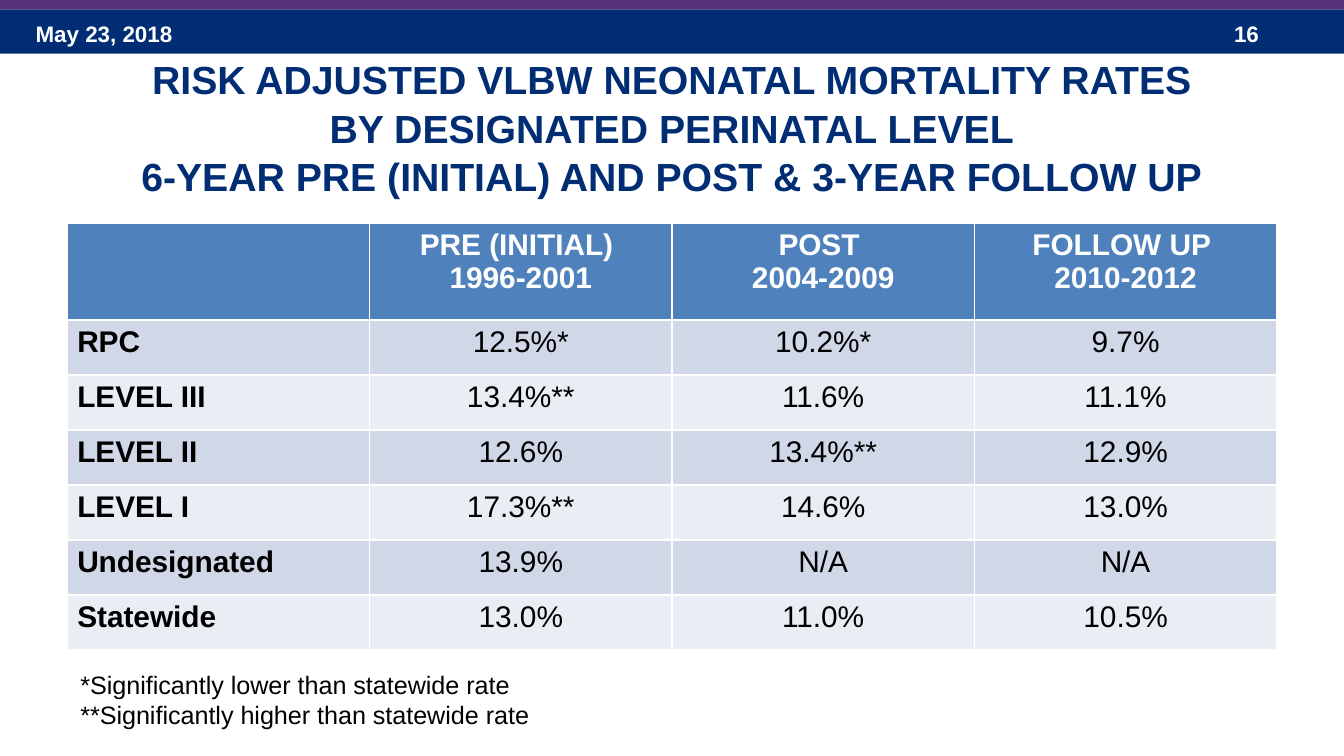
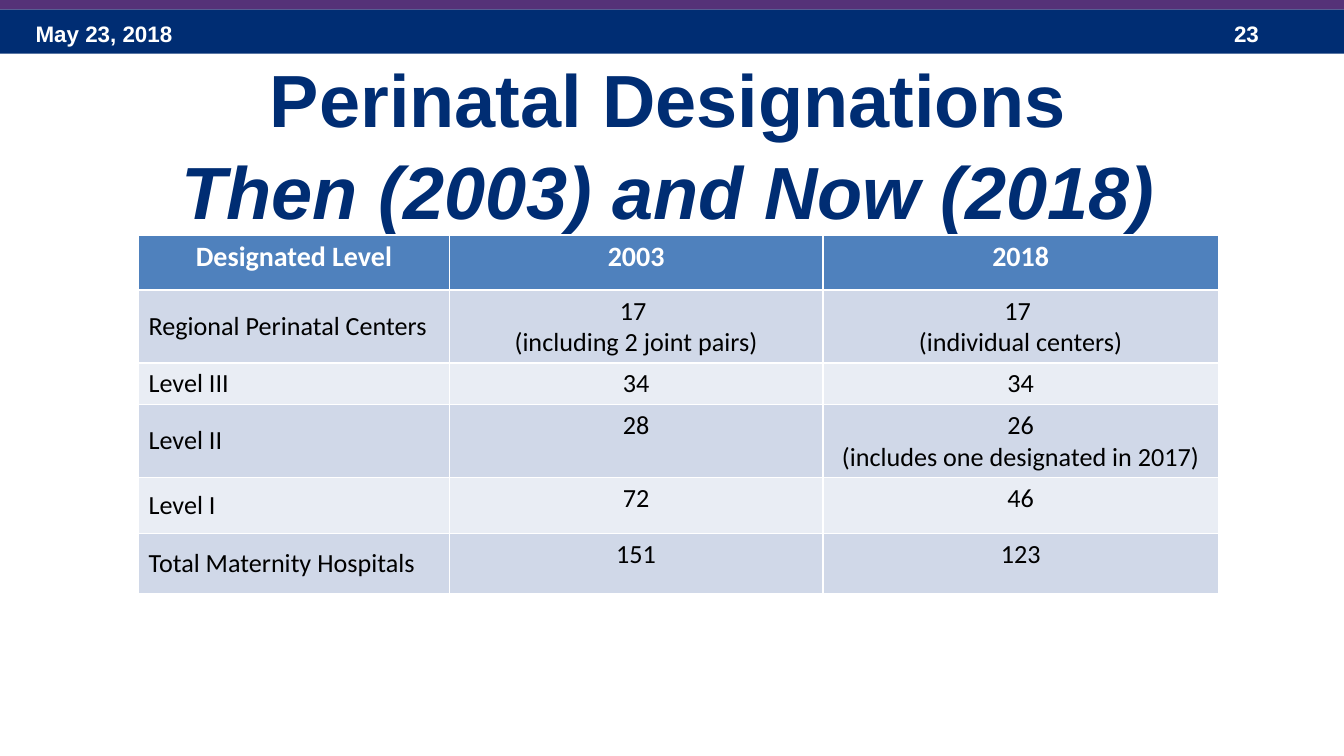
from dataclasses import dataclass

from pptx import Presentation
from pptx.dml.color import RGBColor
from pptx.enum.shapes import MSO_SHAPE
from pptx.enum.text import MSO_ANCHOR, PP_ALIGN
from pptx.util import Pt


@dataclass(frozen=True)
class Theme:
    navy: str = "002D73"
    purple: str = "553278"
    white: str = "FFFFFF"
    black: str = "000000"
    header_fill: str = "4F81BD"
    row_fills: tuple = ("D0D8E8", "E9EDF4")
    font: str = "Arial"
    table_font: str = "Calibri"
    banner_size: float = 12
    rates_title_size: float = 21
    designations_title_size: float = 39.6
    rates_size: float = 16
    header_size: float = 15
    designations_size: float = 14
    note_size: float = 13.5
    title_spacing: float = 1.04


THEME = Theme()
PAGE_WIDTH, PAGE_HEIGHT = 720, 405


def text_format(size, color, bold=False, name=THEME.font):
    return {"size": Pt(size), "name": name, "bold": bold, "color": color}


def apply_format(font, values):
    for key, value in values.items():
        if key == "color":
            font.color.rgb = RGBColor.from_string(value)
        else:
            setattr(font, key, value)


def write_span(para, text, values):
    span = para.add_run()
    span.text = text
    apply_format(span.font, values)


def write_lines(frame, lines, values, align=PP_ALIGN.LEFT):
    for index, line in enumerate(lines):
        para = frame.paragraphs[0] if index == 0 else frame.add_paragraph()
        para.alignment = align
        write_span(para, line, values)


def add_text_box(page, place):
    box = page.shapes.add_textbox(*map(Pt, place))
    box.text_frame.word_wrap = True
    return box.text_frame


def add_band(page, top, height, color):
    band = page.shapes.add_shape(
        MSO_SHAPE.RECTANGLE, 0, Pt(top), Pt(PAGE_WIDTH), Pt(height))
    band.shadow.inherit = False
    band.fill.solid()
    band.fill.fore_color.rgb = RGBColor.from_string(color)
    band.line.fill.background()


def add_page(deck, number):
    page = deck.slides.add_slide(deck.slide_layouts[6])
    add_band(page, 5, 23.75, THEME.navy)
    values = text_format(THEME.banner_size, THEME.white, True)
    for text, left, width in (("May 23, 2018", 12, 168), (str(number), 654, 54)):
        write_lines(add_text_box(page, (left, 7.2, width, 21.6)), [text], values)
    add_band(page, -1.5, 6.5, THEME.purple)
    return page


def add_title(page, place, lines, size, italic_lines=()):
    frame = add_text_box(page, place)
    frame.vertical_anchor = MSO_ANCHOR.MIDDLE
    para = frame.paragraphs[0]
    para.alignment = PP_ALIGN.CENTER
    para.line_spacing = THEME.title_spacing
    values = text_format(size, THEME.navy, True)
    for index, line in enumerate(lines):
        if index:
            para.add_line_break()
        write_span(para, line, values | {"italic": index in italic_lines})


def fill_cell(cell, text, color, values, align, anchor):
    margins = {"margin_left": 5.4, "margin_right": 5.4,
               "margin_top": 2.7, "margin_bottom": 2.7}
    for key, value in margins.items():
        setattr(cell, key, Pt(value))
    cell.fill.solid()
    cell.fill.fore_color.rgb = RGBColor.from_string(color)
    cell.vertical_anchor = anchor
    if text:
        write_lines(cell.text_frame, text.split("\n"), values, align)


def add_grid(page, left, top, widths, heights, rows, formats, label_anchor):
    table = page.shapes.add_table(
        len(rows), len(widths), Pt(left), Pt(top),
        Pt(sum(widths)), Pt(sum(heights))).table
    for column, width in zip(table.columns, widths):
        column.width = Pt(width)
    for row, height in zip(table.rows, heights):
        row.height = Pt(height)
    for r, row in enumerate(rows):
        color = THEME.row_fills[(r - 1) % 2] if r else THEME.header_fill
        for c, text in enumerate(row):
            is_label = r > 0 and c == 0
            kind = "label" if is_label else "value" if r else "header"
            fill_cell(table.cell(r, c), text, color, formats[kind],
                      PP_ALIGN.LEFT if is_label else PP_ALIGN.CENTER,
                      label_anchor if is_label else MSO_ANCHOR.TOP)


def add_rates_page(deck):
    page = add_page(deck, 16)
    add_title(page, (36, 34, 648, 67.5), [
        "RISK ADJUSTED VLBW NEONATAL MORTALITY RATES",
        "BY DESIGNATED PERINATAL LEVEL",
        "6-YEAR PRE (INITIAL) AND POST & 3-YEAR FOLLOW UP",
    ], THEME.rates_title_size)
    rows = [
        ("", "PRE (INITIAL) \n1996-2001", "POST \n2004-2009", "FOLLOW UP \n2010-2012"),
        ("RPC", "12.5%*", "10.2%*", "9.7%"),
        ("LEVEL III", "13.4%**", "11.6%", "11.1%"),
        ("LEVEL II", "12.6%", "13.4%**", "12.9%"),
        ("LEVEL I", "17.3%**", "14.6%", "13.0%"),
        ("Undesignated", "13.9%", "N/A", "N/A"),
        ("Statewide", "13.0%", "11.0%", "10.5%"),
    ]
    formats = {
        "header": text_format(THEME.rates_size, THEME.white, True),
        "label": text_format(THEME.rates_size, THEME.black, True),
        "value": text_format(THEME.rates_size, THEME.black),
    }
    add_grid(page, 36, 119.7, [162] * 4, [51.8] + [29.5] * 6, rows, formats,
             MSO_ANCHOR.TOP)
    write_lines(add_text_box(page, (36, 355, 282, 40)), [
        "*Significantly lower than statewide rate",
        "**Significantly higher than statewide rate",
    ], text_format(THEME.note_size, THEME.black))


def add_designations_page(deck):
    page = add_page(deck, 23)
    add_title(page, (39.6, 26.6, 648, 99.4),
              ["Perinatal Designations ", "Then (2003) and Now (2018) "],
              THEME.designations_title_size, italic_lines=(1,))
    rows = [
        ("Designated Level", "2003", "2018"),
        ("Regional Perinatal Centers", "17 \n(including 2 joint pairs)",
         "17 \n(individual centers)"),
        ("Level III", "34", "34"),
        ("Level II", "28", "26\n(includes one designated in 2017)"),
        ("Level I", "72", "46"),
        ("Total Maternity Hospitals", "151", "123"),
    ]
    body = text_format(THEME.designations_size, THEME.black, name=THEME.table_font)
    formats = {
        "header": text_format(THEME.header_size, THEME.white, True, THEME.table_font),
        "label": body,
        "value": body,
    }
    add_grid(page, 74.2, 126, [166.6, 200, 212], [29.5, 38.5, 22, 38.5, 30, 32.5],
             rows, formats, MSO_ANCHOR.MIDDLE)


def main():
    deck = Presentation()
    deck.slide_width, deck.slide_height = Pt(PAGE_WIDTH), Pt(PAGE_HEIGHT)
    add_rates_page(deck)
    add_designations_page(deck)
    deck.save("out.pptx")


if __name__ == "__main__":
    main()
